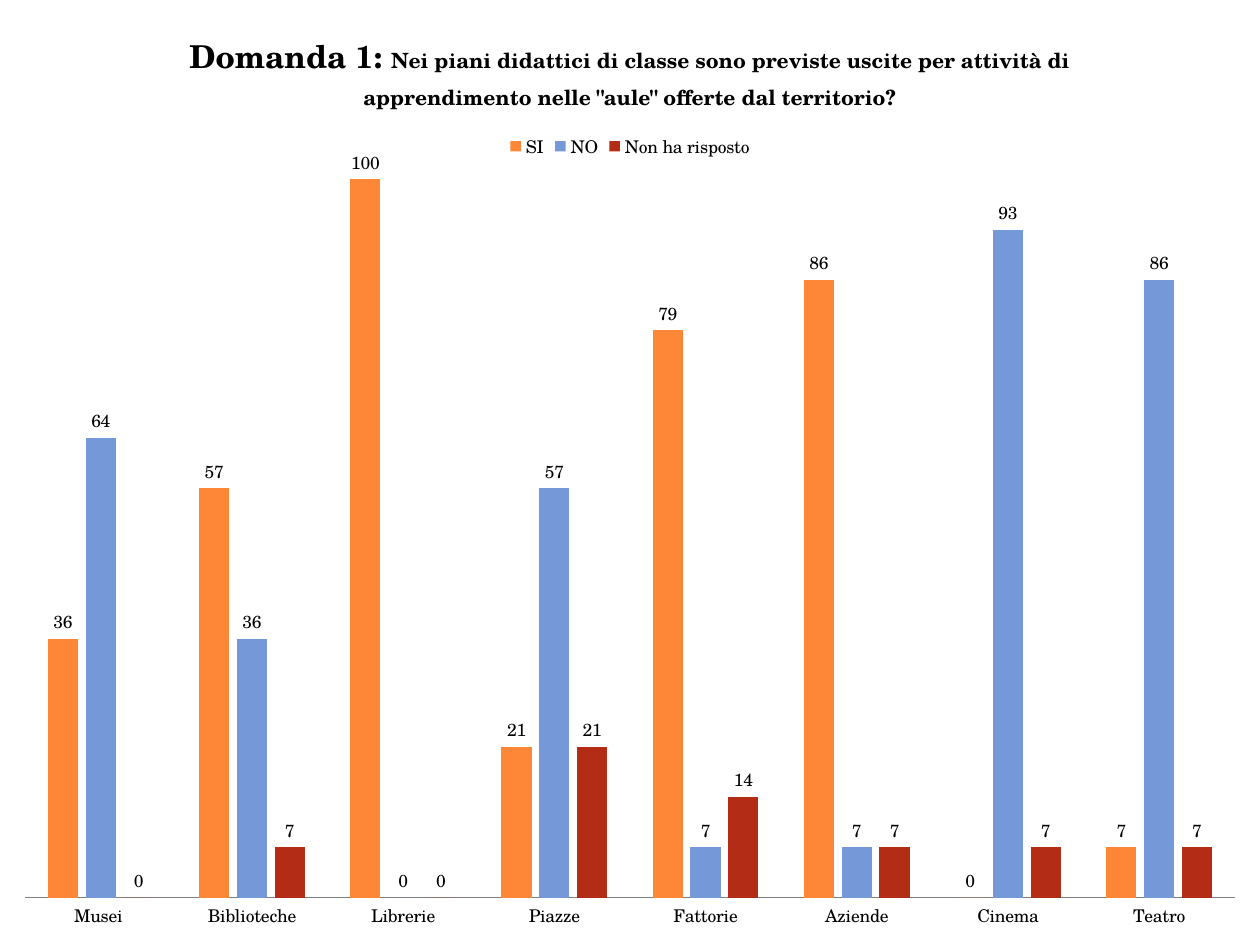
from lxml import etree
from pptx import Presentation
from pptx.chart.data import CategoryChartData
from pptx.dml.color import RGBColor
from pptx.enum.chart import XL_CHART_TYPE, XL_LABEL_POSITION, XL_LEGEND_POSITION, XL_TICK_MARK
from pptx.oxml.ns import qn
from pptx.util import Cm, Pt

COLUMNS = XL_CHART_TYPE.COLUMN_CLUSTERED
ABOVE = XL_LABEL_POSITION.OUTSIDE_END
TOP = XL_LEGEND_POSITION.TOP
NO_TICK = XL_TICK_MARK.NONE

TITLE = [
    ("Domanda 1: ", "lead"),
    ("Nei piani didattici di classe sono previste uscite per attività di "
     'apprendimento nelle "aule" offerte dal territorio?', "question"),
]
PLACES = ["Musei ", "Biblioteche", "Librerie", "Piazze",
          "Fattorie", "Aziende", "Cinema", "Teatro"]
ANSWERS = {
    "SI": [36, 57, 100, 21, 79, 86, 0, 7],
    "NO": [64, 36, 0, 57, 7, 7, 93, 86],
    "Non ha risposto": [0, 7, 0, 21, 14, 7, 7, 7],
}
PLOT_AREA = {"x": 0.02, "y": 0.19, "w": 0.96, "h": 0.76}
THEME = {
    "font": "TeX Gyre Schola",
    "text": "000000",
    "axis": "808080",
    "series": ["FE8637", "7598D9", "B32C16"],
    "lead": 18,
    "question": 12,
    "body": 10,
}


def style(font, size, bold=False):
    font.name = THEME["font"]
    font.size = Pt(size)
    font.bold = bold
    font.color.rgb = RGBColor.from_string(THEME["text"])


def add_text(p, text, **fmt):
    r = p.add_run()
    r.text = text
    style(r.font, **fmt)


def place_plot(chart, area):
    plot_area = chart.plots[0]._element.getparent()
    for old in plot_area.findall(qn("c:layout")):
        plot_area.remove(old)
    layout = etree.Element(qn("c:layout"))
    manual = etree.SubElement(layout, qn("c:manualLayout"))
    settings = {"layoutTarget": "inner", "xMode": "edge", "yMode": "edge", **area}
    for tag, value in settings.items():
        etree.SubElement(manual, qn(f"c:{tag}")).set("val", str(value))
    plot_area.insert(0, layout)


def add_answers(s, width, height):
    data = CategoryChartData(number_format="0")
    data.categories = PLACES
    for name, values in ANSWERS.items():
        data.add_series(name, values)
    chart = s.shapes.add_chart(COLUMNS, 0, 0, width, height, data).chart
    style(chart.font, THEME["body"])

    chart.has_title = True
    p = chart.chart_title.text_frame.paragraphs[0]
    for text, role in TITLE:
        add_text(p, text, size=THEME[role], bold=True)
    chart.chart_title.include_in_layout = False

    chart.has_legend = True
    chart.legend.position = TOP
    chart.legend.include_in_layout = False

    axis = chart.category_axis
    axis.major_tick_mark = axis.minor_tick_mark = NO_TICK
    axis.format.line.color.rgb = RGBColor.from_string(THEME["axis"])
    axis.format.line.width = Pt(1)
    scale = chart.value_axis
    scale.minimum_scale, scale.maximum_scale = 0, 100
    scale.has_major_gridlines = False
    scale.visible = False

    plot = chart.plots[0]
    plot.vary_by_categories = False
    plot.gap_width, plot.overlap = 150, -25
    for series, color in zip(plot.series, THEME["series"]):
        series.format.fill.solid()
        series.format.fill.fore_color.rgb = RGBColor.from_string(color)
        labels = series.data_labels
        labels.show_value = True
        labels.number_format = "0"
        labels.number_format_is_linked = False
        labels.position = ABOVE
        style(labels.font, THEME["body"])
    place_plot(chart, PLOT_AREA)


def main():
    """Build the slide with the survey answers for each kind of place."""
    prs = Presentation()
    prs.slide_width, prs.slide_height = Cm(25.4), Cm(19.05)
    s = prs.slides.add_slide(prs.slide_layouts[6])
    add_answers(s, prs.slide_width, prs.slide_height)
    prs.save("out.pptx")


if __name__ == "__main__":
    main()
